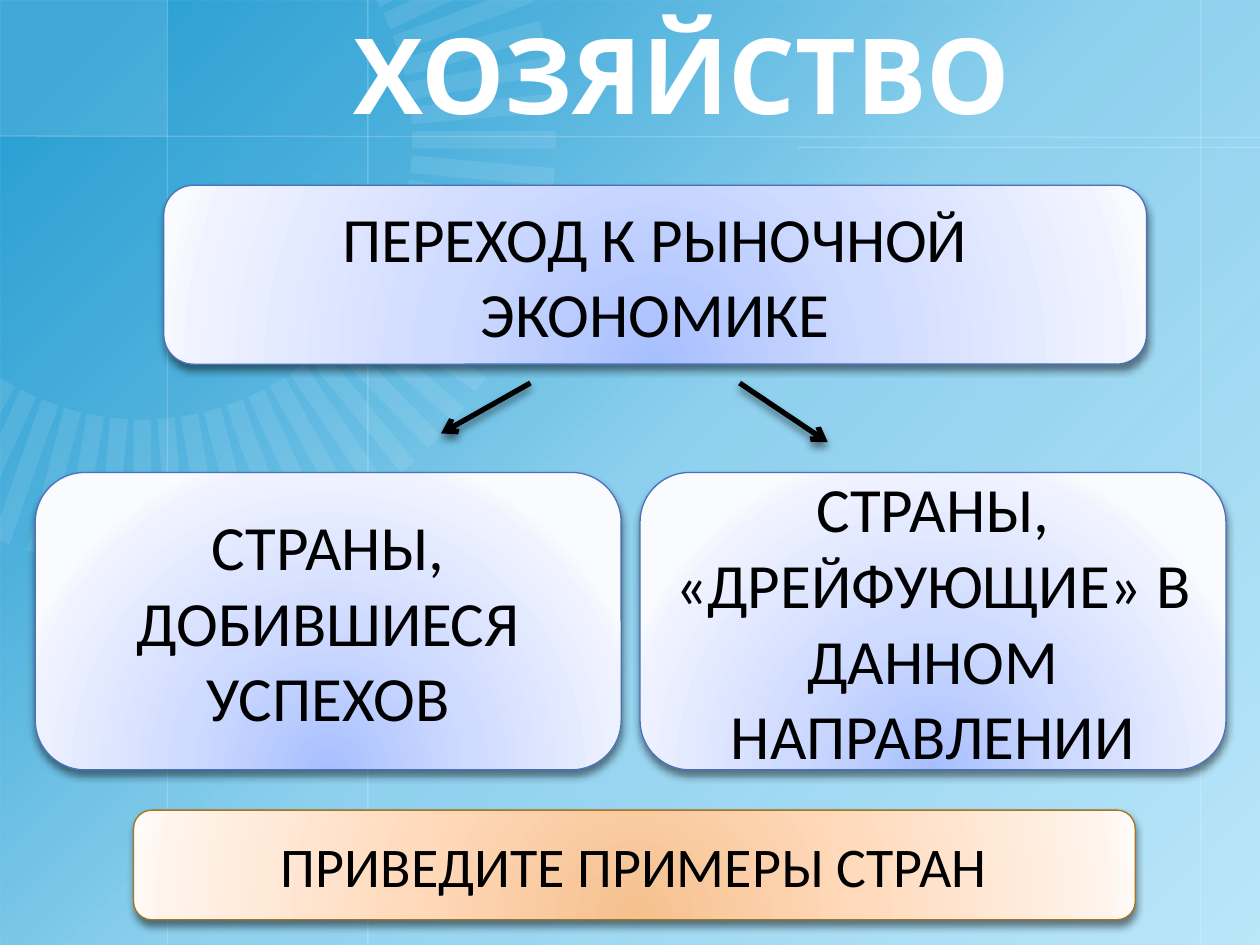
"""Builds a slide on the transition to a market economy."""
import math
from dataclasses import dataclass

import pptx
import pptx.dml.color
import pptx.enum.shapes
import pptx.enum.text
import pptx.oxml
import pptx.oxml.ns
import pptx.util
from pptx.util import Inches

SHAPE = pptx.enum.shapes.MSO_SHAPE
NS = pptx.oxml.ns.nsdecls("a")
qn = pptx.oxml.ns.qn
BLUE = ((0, "A8BFFF", 100), (43, "CEDAFF", 100), (93, "F0F3FF", 100), (100, "FAFBFF", 100))
ORANGE = ((0, "F5C08D", 100), (43, "FFD9BA", 100), (93, "FFF3EA", 100), (100, "FFFBF8", 100))
SKY = ((6, "0F92CC", 83), (26, "0F92CC", 63), (50, "0F92CC", 27), (100, "0F92CC", 0))
GLOW = ('<a:path path="circle">'
        '<a:fillToRect l="50000" t="130000" r="50000" b="-30000"/></a:path>')
DIAGONAL = '<a:lin ang="2700000" scaled="0"/>'


@dataclass
class Box:
    left: float
    top: float
    width: float
    height: float
    text: str
    size: int = 36
    stops: tuple = BLUE
    border: str = "4A71BE"


@dataclass
class Line:
    x1: float
    y1: float
    x2: float
    y2: float


RULES = [Line(x, 0, x, 7.5) for x in (1.33, 9.53, 2.92)]
RULES += [Line(0, 1.08, 10, 1.09), Line(6.33, 1.17, 10, 1.17)]
BOXES = [
    Box(1.3, 1.47, 7.8, 1.42, "ПЕРЕХОД К РЫНОЧНОЙ ЭКОНОМИКЕ"),
    Box(0.28, 3.75, 4.65, 2.36, "СТРАНЫ, ДОБИВШИЕСЯ УСПЕХОВ"),
    Box(5.08, 3.75, 4.65, 2.36, "СТРАНЫ, «ДРЕЙФУЮЩИЕ» В ДАННОМ НАПРАВЛЕНИИ"),
    Box(1.06, 6.43, 7.95, 0.87, "ПРИВЕДИТЕ ПРИМЕРЫ СТРАН", 32, ORANGE, "A7731C"),
]
ARROWS = [Line(4.21, 3.04, 3.5, 3.44), Line(5.87, 3.04, 6.57, 3.51)]


def rgb(value: str):
    return pptx.dml.color.RGBColor.from_string(value)


def set_alpha(sp, percent: int) -> None:
    for color in sp._element.spPr.iter(qn("a:srgbClr")):
        color.append(pptx.oxml.parse_xml(f'<a:alpha {NS} val="{percent * 1000}"/>'))


def set_gradient(sp, stops: tuple, direction: str) -> None:
    stop_xml = "".join(
        f'<a:gs pos="{pos * 1000}"><a:srgbClr val="{color}">'
        f'<a:alpha val="{alpha * 1000}"/></a:srgbClr></a:gs>'
        for pos, color, alpha in stops)
    sp.fill.background()
    spPr = sp._element.spPr
    spPr.replace(spPr.find(qn("a:noFill")), pptx.oxml.parse_xml(
        f'<a:gradFill {NS} rotWithShape="1"><a:gsLst>{stop_xml}</a:gsLst>'
        f'{direction}</a:gradFill>'))


def set_effects(sp, shadow: bool) -> None:
    inner = ('<a:outerShdw blurRad="57150" dist="38100" dir="5400000" algn="ctr" '
             'rotWithShape="0"><a:srgbClr val="000000"><a:alpha val="48000"/>'
             '</a:srgbClr></a:outerShdw>') if shadow else ""
    sp._element.spPr.append(pptx.oxml.parse_xml(f"<a:effectLst {NS}>{inner}</a:effectLst>"))


def add_panel(s, width: float, height: float):
    sp = s.shapes.add_shape(SHAPE.RECTANGLE, 0, 0, Inches(width), Inches(height))
    sp.line.fill.background()
    sp.shadow.inherit = False
    return sp


def add_line(s, line: Line, color: str, weight: float, shadow: bool):
    sp = s.shapes.add_connector(
        pptx.enum.shapes.MSO_CONNECTOR.STRAIGHT,
        Inches(line.x1), Inches(line.y1), Inches(line.x2), Inches(line.y2))
    sp.line.color.rgb = rgb(color)
    sp.line.width = pptx.util.Pt(weight)
    set_effects(sp, shadow)
    return sp


def clip(points: list, axis: int) -> list:
    kept = []
    for a, b in zip(points, points[1:] + points[:1]):
        if a[axis] >= 0:
            kept.append(a)
        if (a[axis] >= 0) != (b[axis] >= 0):
            t = a[axis] / (a[axis] - b[axis])
            kept.append(tuple(m + t * (n - m) for m, n in zip(a, b)))
    return kept


def add_ray(s, degrees: int) -> None:
    cos, sin = math.cos(math.radians(degrees)), math.sin(math.radians(degrees))
    half = 0.07
    corners = [(1.13 + rx * cos - side * sin, 1.11 + ry * sin + side * cos)
               for rx, ry, side in ((2.14, 2.22, -half), (3.28, 3.39, -half),
                                    (3.28, 3.39, half), (2.14, 2.22, half))]
    points = [(Inches(x), Inches(y)) for x, y in clip(clip(corners, 0), 1)]
    builder = s.shapes.build_freeform(*points[0], scale=1.0)
    builder.add_line_segments(points[1:], close=True)
    sp = builder.convert_to_shape()
    sp.fill.solid()
    sp.fill.fore_color.rgb = rgb("F2FAFE")
    sp.line.fill.background()
    sp.shadow.inherit = False
    set_alpha(sp, 10)


def add_backdrop(s) -> None:
    s.background.fill.solid()
    s.background.fill.fore_color.rgb = rgb("BCE7FA")
    set_gradient(add_panel(s, 10, 7.5), SKY, DIAGONAL)
    corner = add_panel(s, 1.33, 1.08)
    corner.fill.solid()
    corner.fill.fore_color.rgb = rgb("FFFFFF")
    set_alpha(corner, 10)
    for rule in RULES:
        set_alpha(add_line(s, rule, "FFFFFF", 0.75, False), 20)
    for degrees in range(-30, 125, 5):
        add_ray(s, degrees)


def set_text(sp, text: str, size: int, font: str, color: str, bold: bool) -> None:
    tf = sp.text_frame
    tf.text = text
    tf.word_wrap = True
    tf.auto_size = pptx.enum.text.MSO_AUTO_SIZE.NONE
    tf.vertical_anchor = pptx.enum.text.MSO_ANCHOR.MIDDLE
    p = tf.paragraphs[0]
    p.alignment = pptx.enum.text.PP_ALIGN.CENTER
    p.font.size = pptx.util.Pt(size)
    p.font.name = font
    p.font.bold = bold
    p.font.color.rgb = rgb(color)


def add_title(s, text: str) -> None:
    sp = s.shapes.title
    sp.left, sp.top, sp.width, sp.height = Inches(1.33), 0, Inches(8.17), Inches(1.15)
    set_text(sp, text, 60, "Cabin", "FFFFFF", True)
    s.shapes._spTree.append(sp._element)


def add_box(s, box: Box) -> None:
    sp = s.shapes.add_shape(SHAPE.ROUNDED_RECTANGLE, Inches(box.left), Inches(box.top),
                            Inches(box.width), Inches(box.height))
    set_gradient(sp, box.stops, GLOW)
    sp.line.color.rgb = rgb(box.border)
    sp.line.width = pptx.util.Pt(0.75)
    set_effects(sp, True)
    set_text(sp, box.text, box.size, "Calibri", "000000", False)


def add_arrow(s, line: Line) -> None:
    sp = add_line(s, line, "000000", 3, True)
    sp.line._get_or_add_ln().append(pptx.oxml.parse_xml(f'<a:tailEnd {NS} type="arrow"/>'))


def main() -> None:
    prs = pptx.Presentation()
    prs.slide_width, prs.slide_height = Inches(10), Inches(7.5)
    s = prs.slides.add_slide(prs.slide_layouts[5])
    add_backdrop(s)
    add_title(s, "ХОЗЯЙСТВО")
    for box in BOXES:
        add_box(s, box)
    for arrow in ARROWS:
        add_arrow(s, arrow)
    prs.save("out.pptx")


if __name__ == "__main__":
    main()
